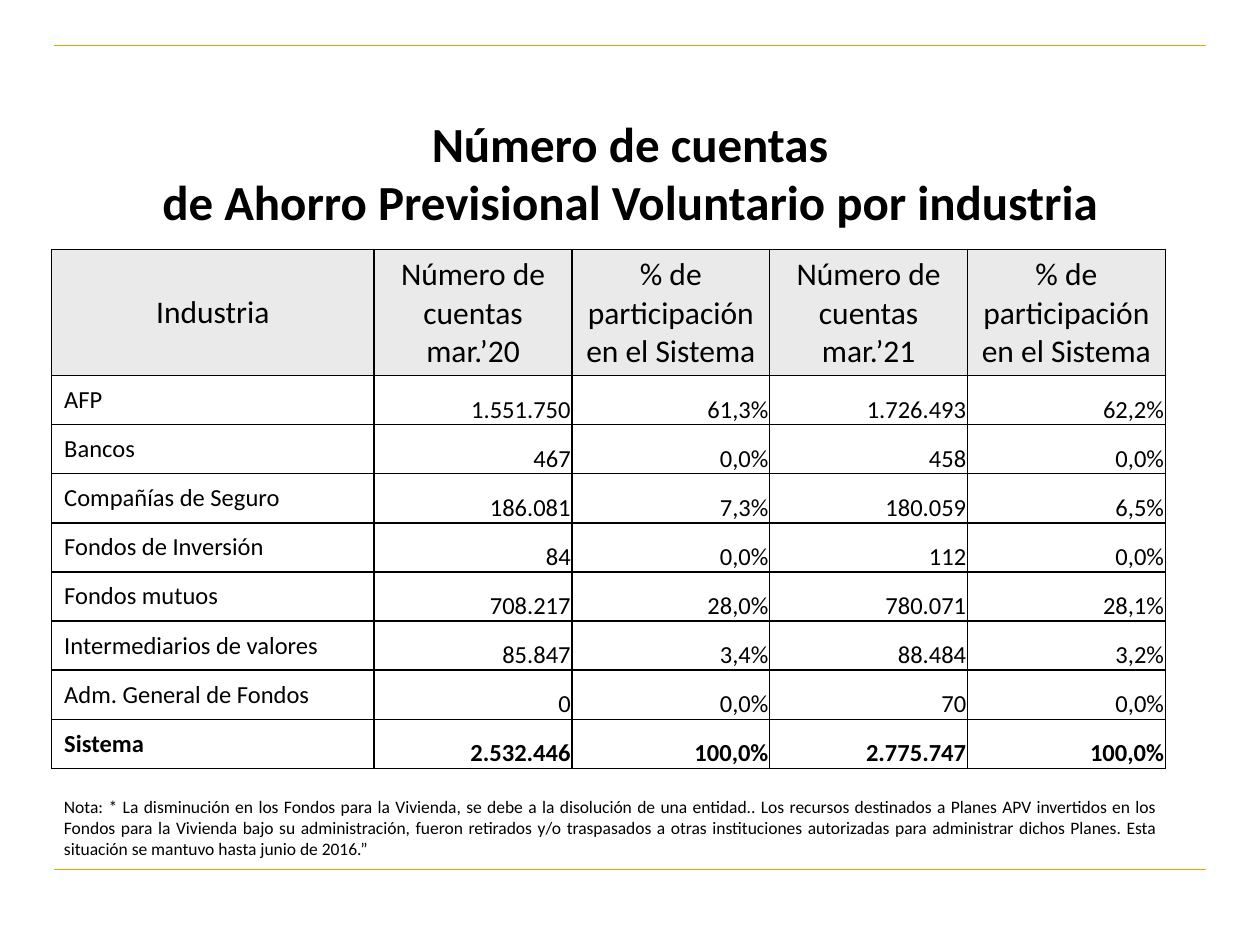
from lxml.etree import SubElement
from pptx import Presentation
from pptx.dml.color import RGBColor
from pptx.enum.shapes import MSO_CONNECTOR as Connector
from pptx.enum.text import MSO_ANCHOR as Anchor, PP_ALIGN as Align
from pptx.oxml.ns import qn
from pptx.util import Inches, Pt

COLORS = {"rule": "FF9900", "text": "000000", "border": "000000",
          "header": "EAEAEA", "body": "FFFFFF"}
FONT = "Calibri"
LEFT, WIDTH = 0.41, 8.86
TEXT_INSETS = (0.1, 0.05, 0.1, 0.05)
NUMBER_INSETS = (0.01, 0.01, 0.01, 0)

TITLE = ["Número de cuentas", "de Ahorro Previsional Voluntario por industria"]
SHARE = ["% de participación en el Sistema"]
HEADERS = [["Industria"], ["Número de cuentas", "mar.’20"], SHARE,
           ["Número de cuentas", "mar.’21"], SHARE]
ROWS = [
    ("AFP", "1.551.750", "61,3%", "1.726.493", "62,2%"),
    ("Bancos", "467", "0,0%", "458", "0,0%"),
    ("Compañías de Seguro", "186.081", "7,3%", "180.059", "6,5%"),
    ("Fondos de Inversión", "84", "0,0%", "112", "0,0%"),
    ("Fondos mutuos", "708.217", "28,0%", "780.071", "28,1%"),
    ("Intermediarios de valores", "85.847", "3,4%", "88.484", "3,2%"),
    ("Adm. General de Fondos", "0", "0,0%", "70", "0,0%"),
    ("Sistema", "2.532.446", "100,0%", "2.775.747", "100,0%"),
]
NOTE = (
    "Nota: * La disminución en los Fondos para la Vivienda, se debe a la "
    "disolución de una entidad.. Los recursos destinados a Planes APV "
    "invertidos en los Fondos para la Vivienda bajo su administración, fueron "
    "retirados y/o traspasados a otras instituciones autorizadas para "
    "administrar dichos Planes. Esta situación se mantuvo hasta junio de 2016.”"
)


def color(name):
    return RGBColor.from_string(COLORS[name])


def add_span(para, text, size, bold=False):
    span = para.add_run()
    span.text = text
    span.font.name = FONT
    span.font.size = Pt(size)
    span.font.bold = bold
    span.font.color.rgb = color("text")


def add_rule(page, y):
    rule = page.shapes.add_connector(Connector.STRAIGHT, Inches(0.43), Inches(y),
                                     Inches(9.57), Inches(y))
    rule.line.color.rgb = color("rule")
    rule.line.width = Pt(0.75)
    SubElement(rule.element.spPr, qn("a:effectLst"))


def add_text(page, area, lines, size, align, bold=False, anchor=Anchor.TOP,
             bottom=0.05):
    box = page.shapes.add_textbox(*map(Inches, area))
    frame = box.text_frame
    frame.word_wrap = True
    frame.vertical_anchor = anchor
    frame.margin_bottom = Inches(bottom)
    para = frame.paragraphs[0]
    para.alignment = align
    for index, line in enumerate(lines):
        if index:
            para.add_line_break()
        add_span(para, line, size, bold)


def set_borders(cell):
    properties = cell._tc.get_or_add_tcPr()
    for index, side in enumerate(("lnL", "lnR", "lnT", "lnB")):
        border = properties.makeelement(qn(f"a:{side}"), {"w": str(Pt(1))})
        fill = SubElement(border, qn("a:solidFill"))
        SubElement(fill, qn("a:srgbClr"), val=COLORS["border"])
        properties.insert(index, border)


def fill_cell(cell, lines, size, align, anchor, insets, fill, bold=False):
    (cell.margin_left, cell.margin_top,
     cell.margin_right, cell.margin_bottom) = map(Inches, insets)
    cell.vertical_anchor = anchor
    if fill:
        cell.fill.solid()
        cell.fill.fore_color.rgb = color(fill)
    else:
        cell.fill.background()
    set_borders(cell)
    frame = cell.text_frame
    for index, line in enumerate(lines):
        para = frame.add_paragraph() if index else frame.paragraphs[0]
        para.alignment = align
        add_span(para, line, size, bold)


def add_accounts_table(page):
    widths = [2.56] + [1.57] * 4
    heights = [0.97] + [0.39] * len(ROWS)
    table = page.shapes.add_table(len(heights), len(widths), Inches(LEFT), Inches(1.98),
                                  Inches(WIDTH), Inches(4.15)).table
    table.first_row = table.horz_banding = False
    for column, width in zip(table.columns, widths):
        column.width = Inches(width)
    for row, height in zip(table.rows, heights):
        row.height = Inches(height)

    # Header row
    for index, lines in enumerate(HEADERS):
        fill_cell(table.cell(0, index), lines, 18, Align.CENTER, Anchor.MIDDLE,
                  TEXT_INSETS, "header")

    # Industries, with the system total in the last row
    for number, (industry, *values) in enumerate(ROWS, 1):
        bold = number == len(ROWS)
        fill_cell(table.cell(number, 0), [industry], 14, Align.LEFT, Anchor.MIDDLE,
                  TEXT_INSETS, "body", bold)
        for index, value in enumerate(values, 1):
            fill_cell(table.cell(number, index), [value], 14, Align.RIGHT,
                      Anchor.BOTTOM, NUMBER_INSETS, "body" if index % 2 else None, bold)


def main():
    deck = Presentation()
    deck.slide_width, deck.slide_height = Inches(10), Inches(7.5)
    page = deck.slides.add_slide(deck.slide_layouts[6])

    # Rules above and below the content
    for y in (0.36, 6.9):
        add_rule(page, y)

    # Title, table and note
    add_text(page, (0.5, 0.99, 9, 1.02), TITLE, 28, Align.CENTER, bold=True,
             anchor=Anchor.MIDDLE, bottom=0.32)
    add_accounts_table(page)
    add_text(page, (LEFT, 6.27, WIDTH, 0.61), [NOTE], 10, Align.JUSTIFY)

    deck.save("out.pptx")


if __name__ == "__main__":
    main()
